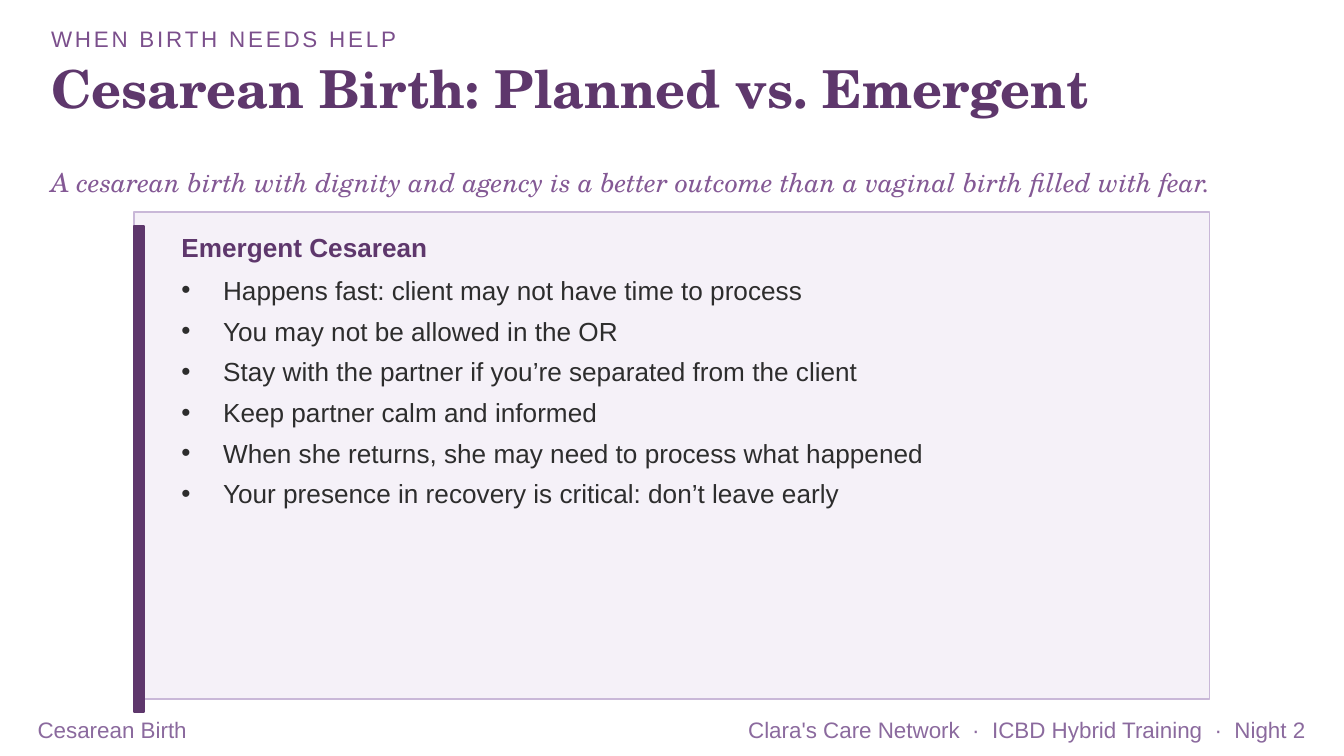
from dataclasses import dataclass

from lxml import etree
from pptx import Presentation
from pptx.dml.color import RGBColor
from pptx.enum.shapes import MSO_SHAPE
from pptx.enum.text import MSO_ANCHOR, MSO_AUTO_SIZE, PP_ALIGN
from pptx.oxml.ns import qn
from pptx.shapes.autoshape import Shape
from pptx.slide import Slide
from pptx.util import Inches, Pt

RECTANGLE = MSO_SHAPE.RECTANGLE
TOP, MIDDLE = MSO_ANCHOR.TOP, MSO_ANCHOR.MIDDLE
LEFT, RIGHT = PP_ALIGN.LEFT, PP_ALIGN.RIGHT
NO_AUTOFIT = MSO_AUTO_SIZE.NONE

PLUM = RGBColor(0x5E, 0x37, 0x6C)
VIOLET = RGBColor(0x7B, 0x4F, 0x8C)
MAUVE = RGBColor(0x84, 0x59, 0x95)
FOOTER_MAUVE = RGBColor(0x8B, 0x6A, 0x9E)
LILAC = RGBColor(0xC9, 0xB8, 0xD8)
PALE_LILAC = RGBColor(0xF5, 0xF1, 0xF8)
CHARCOAL = RGBColor(0x2D, 0x2D, 0x2D)

SANS = "Arial"
SERIF = "TeX Gyre Schola"


@dataclass(frozen=True)
class Box:
    left: float
    top: float
    width: float
    height: float


@dataclass(frozen=True)
class Style:
    size: float
    color: RGBColor
    font: str = SANS
    bold: bool = False
    italic: bool = False
    anchor: MSO_ANCHOR = MIDDLE
    align: PP_ALIGN = LEFT
    tracking: float = 0
    space_after: float = 0
    bullet_indent: float = 0


@dataclass(frozen=True)
class Label:
    text: str
    box: Box
    style: Style


@dataclass(frozen=True)
class Block:
    box: Box
    fill: RGBColor
    line: RGBColor


HEADING = Label(
    "Cesarean Birth: Planned vs. Emergent",
    Box(0.38, 0.42, 9.3, 0.78),
    Style(28, PLUM, SERIF, bold=True, anchor=TOP),
)
LABELS = [
    Label("WHEN BIRTH NEEDS HELP", Box(0.38, 0.18, 9.3, 0.22),
          Style(12, VIOLET, tracking=1.5)),
    Label("A cesarean birth with dignity and agency is a better outcome "
          "than a vaginal birth filled with fear.",
          Box(0.38, 1.24, 9.3, 0.38),
          Style(14, MAUVE, SERIF, italic=True, anchor=TOP)),
    Label("Emergent Cesarean", Box(1.35, 1.7, 7.27, 0.28),
          Style(14, PLUM, bold=True)),
    Label("Cesarean Birth", Box(0.28, 5.32, 4.5, 0.22),
          Style(12, FOOTER_MAUVE)),
    Label("Clara's Care Network  ·  ICBD Hybrid Training  ·  Night 2",
          Box(5.2, 5.32, 4.52, 0.22),
          Style(12, FOOTER_MAUVE, align=RIGHT)),
]
ADVICE = Label(
    "\n".join([
        "Happens fast: client may not have time to process",
        "You may not be allowed in the OR",
        "Stay with the partner if you’re separated from the client",
        "Keep partner calm and informed",
        "When she returns, she may need to process what happened",
        "Your presence in recovery is critical: don’t leave early",
    ]),
    Box(1.35, 2.04, 7.31, 3),
    Style(14, CHARCOAL, anchor=TOP, space_after=5, bullet_indent=0.31),
)
BLOCKS = [
    Block(Box(1, 1.58, 8, 3.62), PALE_LILAC, LILAC),
    Block(Box(1, 1.68, 0.07, 3.62), PLUM, PLUM),
]


def lengths(box: Box) -> tuple[Inches, Inches, Inches, Inches]:
    return Inches(box.left), Inches(box.top), Inches(box.width), Inches(box.height)


def write(shape: Shape, label: Label) -> None:
    style = label.style
    shape.left, shape.top, shape.width, shape.height = lengths(label.box)
    frame = shape.text_frame
    frame.text = label.text
    frame.word_wrap = True
    frame.auto_size = NO_AUTOFIT
    frame.vertical_anchor = style.anchor
    frame.margin_left = frame.margin_right = 0
    frame.margin_top = frame.margin_bottom = 0
    for paragraph in frame.paragraphs:
        paragraph.alignment = style.align
        paragraph.space_before = Pt(0)
        paragraph.space_after = Pt(style.space_after)
        if style.bullet_indent:
            properties = paragraph._p.get_or_add_pPr()
            indent = Inches(style.bullet_indent)
            properties.set("marL", str(indent))
            properties.set("indent", str(-indent))
            bullet = etree.SubElement(properties, qn("a:buChar"))
            bullet.set("char", "•")
        font = paragraph.font
        font.name = style.font
        font.size = Pt(style.size)
        font.bold = style.bold
        font.italic = style.italic
        font.color.rgb = style.color
        if style.tracking:
            for run in paragraph.runs:
                run._r.get_or_add_rPr().set("spc", str(int(style.tracking * 100)))


def draw_block(slide: Slide, block: Block) -> None:
    shape = slide.shapes.add_shape(RECTANGLE, *lengths(block.box))
    shape.shadow.inherit = False
    shape.fill.solid()
    shape.fill.fore_color.rgb = block.fill
    shape.line.color.rgb = block.line
    shape.line.width = Pt(1)


def main() -> None:
    presentation = Presentation()
    presentation.slide_width = Inches(10)
    presentation.slide_height = Inches(10 * 9 / 16)
    slide = presentation.slides.add_slide(presentation.slide_layouts[1])
    write(slide.shapes.title, HEADING)
    for block in BLOCKS:
        draw_block(slide, block)
    advice = slide.placeholders[1]
    write(advice, ADVICE)
    advice.element.getparent().append(advice.element)
    for label in LABELS:
        write(slide.shapes.add_textbox(*lengths(label.box)), label)
    presentation.save("out.pptx")


if __name__ == "__main__":
    main()
